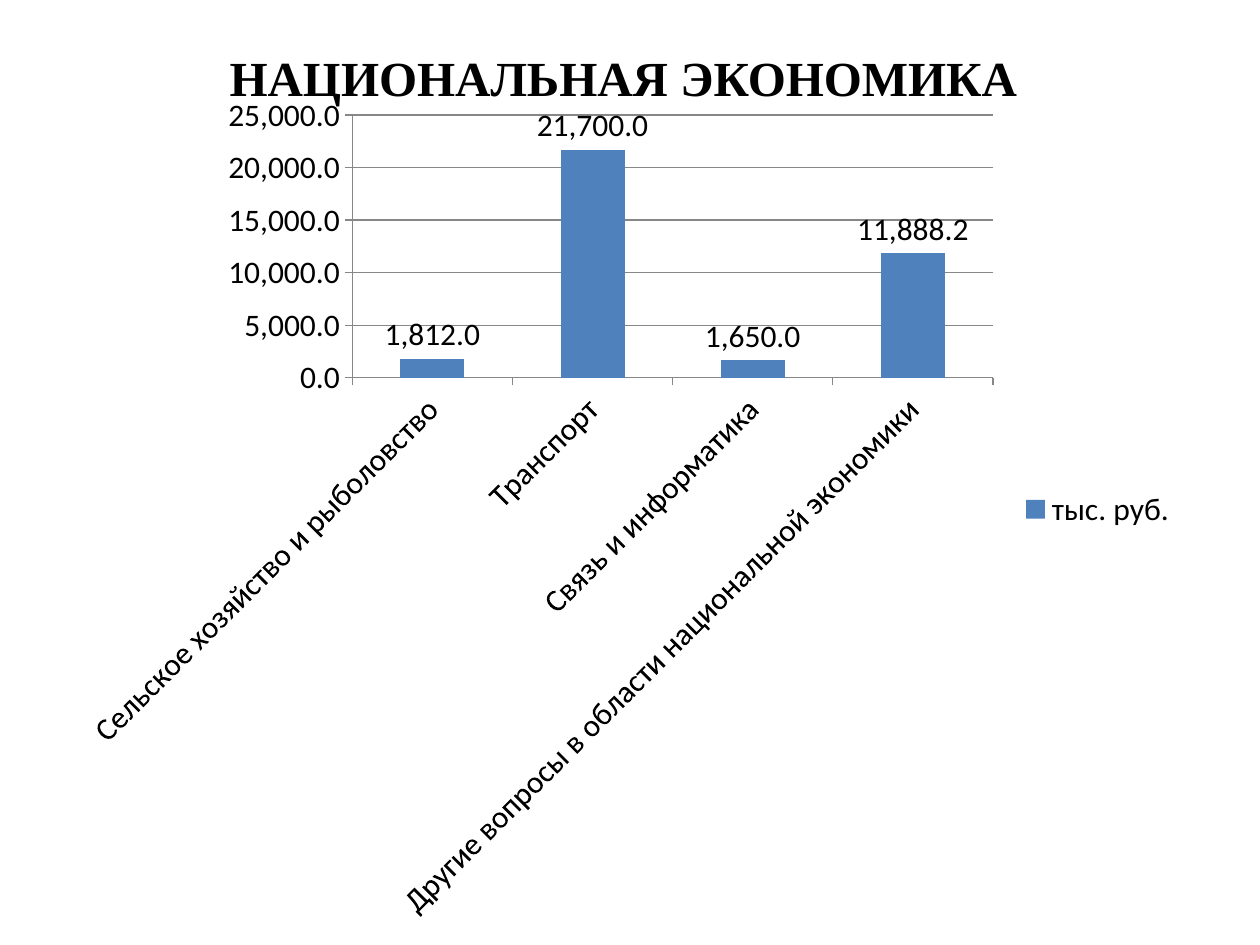
from pptx import Presentation
from pptx.chart.data import CategoryChartData
from pptx.dml.color import RGBColor
from pptx.enum.chart import XL_CHART_TYPE, XL_LABEL_POSITION, XL_LEGEND_POSITION, XL_TICK_MARK
from pptx.enum.text import MSO_ANCHOR, PP_ALIGN
from pptx.util import Emu, Pt

TITLE = "НАЦИОНАЛЬНАЯ ЭКОНОМИКА "
SERIES = "тыс. руб. "
EXPENSES = [
    ("Сельское хозяйство и рыболовство", 1812),
    ("Транспорт", 21700),
    ("Связь и информатика", 1650),
    ("Другие вопросы в области национальной экономики", 11888.2),
]
NUMBER_FORMAT = "#,##0.0"

SLIDE_SIZE = (1260, 945)
TITLE_BOX = (63, 38, 1133, 77)
CHART_BOX = (63, 96, 1134, 824)

BLACK = RGBColor(0x00, 0x00, 0x00)
BLUE = RGBColor(0x4F, 0x81, 0xBD)
GRAY = RGBColor(0x87, 0x87, 0x87)


def px(*lengths):
    return [Emu(round(length * 914400 / 126)) for length in lengths]


def style_font(font, name, size, bold=False):
    font.name = name
    font.size = Pt(size)
    font.bold = bold
    font.color.rgb = BLACK


def style_line(line):
    line.color.rgb = GRAY
    line.width = Pt(0.75)


def add_title(slide):
    frame = slide.shapes.add_textbox(*px(*TITLE_BOX)).text_frame
    frame.word_wrap = True
    frame.vertical_anchor = MSO_ANCHOR.MIDDLE
    heading = frame.paragraphs[0]
    heading.alignment = PP_ALIGN.CENTER
    run = heading.add_run()
    run.text = TITLE
    style_font(run.font, "Times New Roman", 28, bold=True)


def add_expense_chart(slide):
    data = CategoryChartData(number_format=NUMBER_FORMAT)
    data.categories = [name for name, _ in EXPENSES]
    data.add_series(SERIES, [amount for _, amount in EXPENSES])
    chart = slide.shapes.add_chart(
        XL_CHART_TYPE.COLUMN_CLUSTERED, *px(*CHART_BOX), data
    ).chart
    style_font(chart.font, "Calibri", 18)
    chart.has_title = False
    chart.has_legend = True
    chart.legend.position = XL_LEGEND_POSITION.RIGHT
    chart.legend.include_in_layout = False

    for axis in (chart.category_axis, chart.value_axis):
        axis.major_tick_mark = XL_TICK_MARK.OUTSIDE
        axis.minor_tick_mark = XL_TICK_MARK.NONE
        style_line(axis.format.line)
        style_font(axis.tick_labels.font, "Calibri", 18)
    slant = chart.category_axis._element.txPr.bodyPr
    slant.set("rot", str(-45 * 60000))
    slant.set("vert", "horz")

    amounts = chart.value_axis
    amounts.has_major_gridlines = True
    style_line(amounts.major_gridlines.format.line)
    amounts.tick_labels.number_format = NUMBER_FORMAT
    amounts.tick_labels.number_format_is_linked = False

    plot = chart.plots[0]
    plot.gap_width = 150
    plot.vary_by_categories = False
    columns = plot.series[0]
    columns.format.fill.solid()
    columns.format.fill.fore_color.rgb = BLUE
    labels = columns.data_labels
    labels.show_value = True
    labels.position = XL_LABEL_POSITION.OUTSIDE_END
    labels.number_format = NUMBER_FORMAT
    labels.number_format_is_linked = False
    style_font(labels.font, "Calibri", 18)


def main():
    deck = Presentation()
    deck.slide_width, deck.slide_height = px(*SLIDE_SIZE)
    slide = deck.slides.add_slide(deck.slide_layouts[6])
    add_title(slide)
    add_expense_chart(slide)
    deck.save("out.pptx")


if __name__ == "__main__":
    main()
